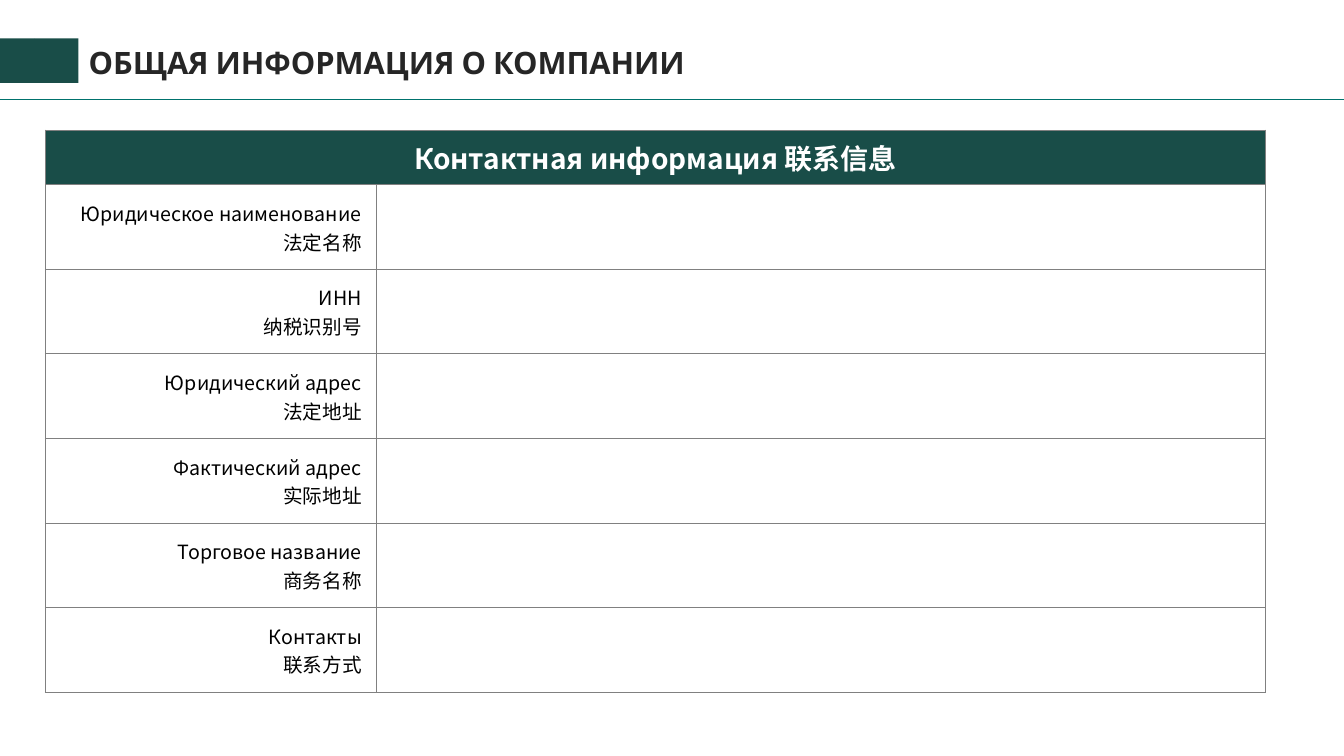
"""Builds the company contact information slide."""
from dataclasses import dataclass

import lxml.etree
import pptx
import pptx.dml.color
import pptx.enum.shapes
import pptx.enum.text
import pptx.oxml.ns
import pptx.util

Cm = pptx.util.Cm
Pt = pptx.util.Pt
RGB = pptx.dml.color.RGBColor.from_string
ALIGN = pptx.enum.text.PP_ALIGN
MIDDLE = pptx.enum.text.MSO_ANCHOR.MIDDLE
qn = pptx.oxml.ns.qn

HEADING = "ОБЩАЯ ИНФОРМАЦИЯ О КОМПАНИИ"
CONTACT_HEADER = "Контактная информация 联系信息"
CONTACT_FIELDS = [
    ("Юридическое наименование", "法定名称"),
    ("ИНН", "纳税识别号"),
    ("Юридический адрес", "法定地址"),
    ("Фактический адрес", "实际地址"),
    ("Торговое название", "商务名称"),
    ("Контакты", "联系方式"),
]


@dataclass(frozen=True)
class Theme:
    green: str = "194D48"
    rule: str = "00726D"
    border: str = "808080"
    heading: str = "262626"
    ink: str = "000000"
    white: str = "FFFFFF"
    heading_font: str = "Cabin"
    table_font: str = "Noto Sans CJK SC"
    heading_size: int = 22
    header_size: int = 20
    label_size: int = 14
    line_width: float = 0.5
    border_width: float = 0.75


THEME = Theme()
SLIDE_SIZE = (Cm(33.87), Cm(19.05))
RULE_TOP = Cm(2.51)
ACCENT_TOP, ACCENT_HEIGHT = Cm(0.97), Cm(1.12)
ACCENT_WIDTHS = (Cm(0.86), Cm(1.12))
HEADING_BOX = (Cm(1.98), Cm(0.79), Cm(30.94), Cm(1.68))
TABLE_LEFT, TABLE_TOP = Cm(1.14), Cm(3.28)
COLUMN_WIDTHS = (Cm(8.34), Cm(22.42))
HEADER_HEIGHT, FIELD_HEIGHT = Cm(1.38), Cm(2.13)
CELL_SIDE, CELL_END = Cm(0.36), Cm(0.13)


def add_text(paragraph, words, font, size, color, bold=False):
    run = paragraph.add_run()
    run.text = words
    run.font.name = font
    run.font.size = Pt(size)
    run.font.bold = bold
    run.font.color.rgb = RGB(color)
    east_asian = lxml.etree.SubElement(run.font._element, qn("a:ea"))
    east_asian.set("typeface", font)


def add_heading(slide):
    heading = slide.shapes.title
    heading.left, heading.top, heading.width, heading.height = HEADING_BOX
    frame = heading.text_frame
    frame.word_wrap = True
    frame.auto_size = pptx.enum.text.MSO_AUTO_SIZE.NONE
    frame.vertical_anchor = MIDDLE
    paragraph = frame.paragraphs[0]
    paragraph.alignment = ALIGN.LEFT
    paragraph.line_spacing = 0.9
    add_text(paragraph, HEADING, THEME.heading_font, THEME.heading_size,
             THEME.heading, bold=True)


def add_decoration(slide):
    rule = slide.shapes.add_connector(
        pptx.enum.shapes.MSO_CONNECTOR.STRAIGHT, 0, RULE_TOP, SLIDE_SIZE[0], RULE_TOP)
    rule.line.color.rgb = RGB(THEME.rule)
    rule.line.width = Pt(THEME.line_width)
    lxml.etree.SubElement(rule._element.spPr, qn("a:effectLst"))
    left = 0
    for width in ACCENT_WIDTHS:
        accent = slide.shapes.add_shape(
            pptx.enum.shapes.MSO_SHAPE.RECTANGLE, left, ACCENT_TOP, width, ACCENT_HEIGHT)
        accent.shadow.inherit = False
        accent.fill.solid()
        accent.fill.fore_color.rgb = RGB(THEME.green)
        accent.line.fill.background()
        left += width


def style_cell(cell):
    cell.margin_left = cell.margin_right = CELL_SIDE
    cell.margin_top = cell.margin_bottom = CELL_END
    cell.vertical_anchor = MIDDLE
    properties = cell._tc.get_or_add_tcPr()
    for side in ("L", "R", "T", "B"):
        border = lxml.etree.SubElement(properties, qn(f"a:ln{side}"))
        border.set("w", str(Pt(THEME.border_width)))
        fill = lxml.etree.SubElement(border, qn("a:solidFill"))
        lxml.etree.SubElement(fill, qn("a:srgbClr")).set("val", THEME.border)
    cell.fill.background()


def add_contact_table(slide):
    row_heights = [HEADER_HEIGHT] + [FIELD_HEIGHT] * len(CONTACT_FIELDS)
    contacts = slide.shapes.add_table(
        len(row_heights), len(COLUMN_WIDTHS), TABLE_LEFT, TABLE_TOP,
        sum(COLUMN_WIDTHS), sum(row_heights)).table
    contacts.first_row = contacts.horz_banding = False
    for column, width in zip(contacts.columns, COLUMN_WIDTHS):
        column.width = width
    for row, height in zip(contacts.rows, row_heights):
        row.height = height
        for cell in row.cells:
            style_cell(cell)

    header = contacts.cell(0, 0)
    header.merge(contacts.cell(0, 1))
    header.fill.solid()
    header.fill.fore_color.rgb = RGB(THEME.green)
    paragraph = header.text_frame.paragraphs[0]
    paragraph.alignment = ALIGN.CENTER
    add_text(paragraph, CONTACT_HEADER, THEME.table_font, THEME.header_size,
             THEME.white, bold=True)

    for row_number, labels in enumerate(CONTACT_FIELDS, start=1):
        frame = contacts.cell(row_number, 0).text_frame
        for position, label in enumerate(labels):
            paragraph = frame.add_paragraph() if position else frame.paragraphs[0]
            paragraph.alignment = ALIGN.RIGHT
            add_text(paragraph, label, THEME.table_font, THEME.label_size, THEME.ink)


def main():
    deck = pptx.Presentation()
    deck.slide_width, deck.slide_height = SLIDE_SIZE
    slide = deck.slides.add_slide(deck.slide_layouts[5])
    add_decoration(slide)
    add_heading(slide)
    add_contact_table(slide)
    deck.save("out.pptx")


if __name__ == "__main__":
    main()
